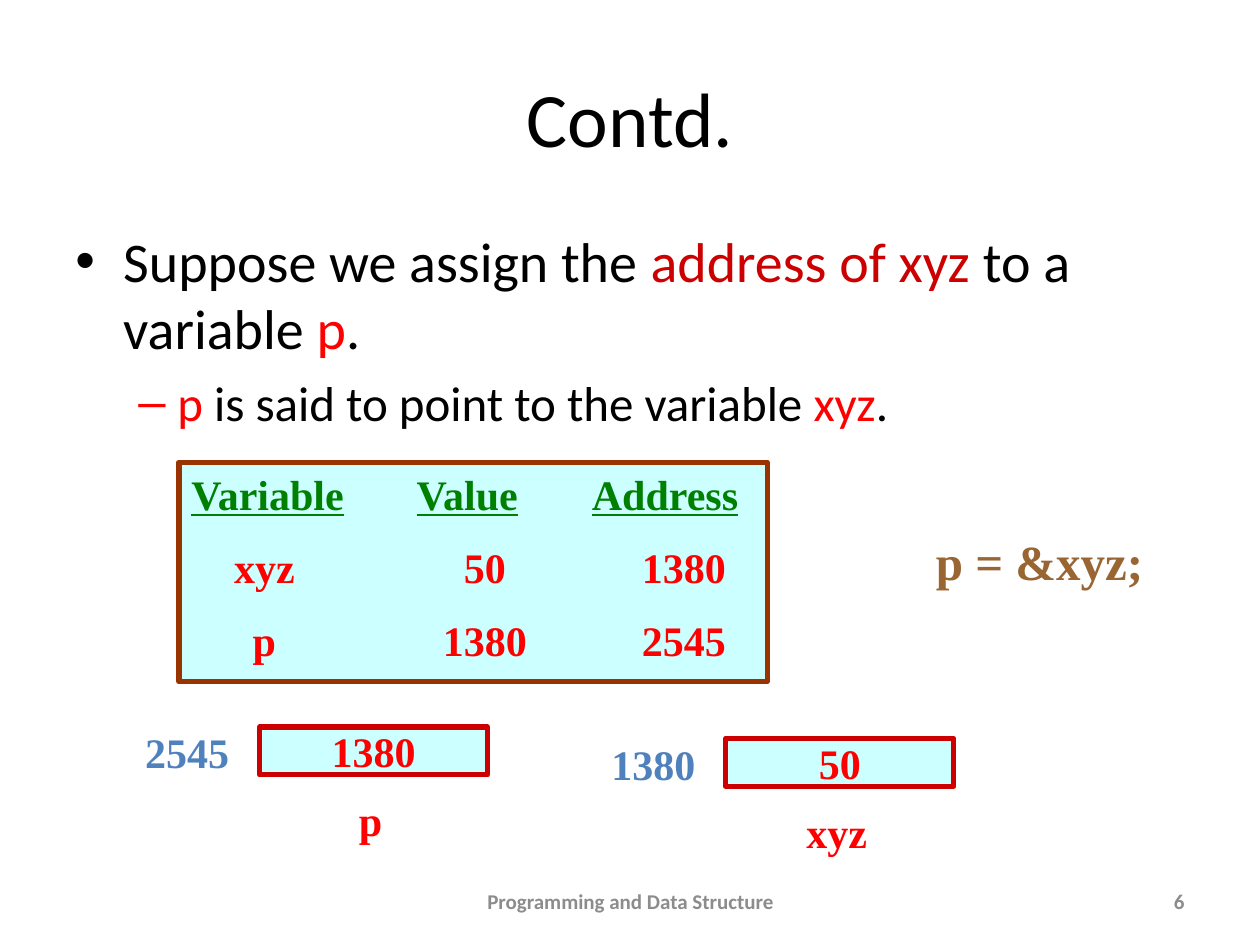
from lxml import etree
from pptx import Presentation
from pptx import util as u
from pptx.dml.color import RGBColor
from pptx.enum import shapes, text
from pptx.oxml.ns import qn

WIDTH, HEIGHT = 10, 7.5
MARGIN = 0.05 * WIDTH
CONTENT = WIDTH - 2 * MARGIN
SANS, SERIF = "Calibri", "Times New Roman"
BLACK, RED, CRIMSON = "000000", "FF0000", "CC0000"
GREEN, BLUE, BROWN, TAN = "008000", "4F81BD", "993300", "996633"
AQUA, GREY = "CCFFFF", "8C8C8C"
LEFT, CENTER, RIGHT = (text.PP_ALIGN.LEFT, text.PP_ALIGN.CENTER,
                       text.PP_ALIGN.RIGHT)
TOP, MIDDLE = text.MSO_ANCHOR.TOP, text.MSO_ANCHOR.MIDDLE


def color(value):
    return RGBColor.from_string(value)


def write(frame, paragraphs, size=24, font=SERIF, fill=BLACK, bold=False,
          align=LEFT, anchor=TOP, wrap=True):
    """Each paragraph is a list of runs; a run is (words, overrides)."""
    frame.word_wrap = wrap
    frame.vertical_anchor = anchor
    for number, runs in enumerate(paragraphs):
        paragraph = frame.add_paragraph() if number else frame.paragraphs[0]
        paragraph.alignment = align
        for words, look in runs:
            run = paragraph.add_run()
            run.text = words
            run.font.name = font
            run.font.bold = bold
            run.font.size = u.Pt(look.get("size", size))
            run.font.underline = look.get("underline", False)
            run.font.color.rgb = color(look.get("fill", fill))
    return frame.paragraphs


def label(slide, box, words, **look):
    area = slide.shapes.add_textbox(*map(u.Inches, box))
    return write(area.text_frame, [[(words, {})]], **look)


def panel(slide, box, outline):
    shape = slide.shapes.add_shape(shapes.MSO_SHAPE.RECTANGLE,
                                   *map(u.Inches, box))
    shape.shadow.inherit = False
    shape.fill.solid()
    shape.fill.fore_color.rgb = color(AQUA)
    shape.line.color.rgb = color(outline)
    shape.line.width = u.Pt(3)
    return shape.text_frame


def add_bullet(paragraph, mark, indent, hang):
    props = paragraph._p.get_or_add_pPr()
    props.set("marL", str(u.Inches(indent)))
    props.set("indent", str(-u.Inches(hang)))
    etree.SubElement(props, qn("a:buFont")).set("typeface", "Arial")
    etree.SubElement(props, qn("a:buChar")).set("char", mark)


def add_center_tabs(paragraph, stops):
    tabs = etree.SubElement(paragraph._p.get_or_add_pPr(), qn("a:tabLst"))
    for stop in stops:
        tab = etree.SubElement(tabs, qn("a:tab"))
        tab.set("pos", str(u.Inches(stop)))
        tab.set("algn", "ctr")


def explanation(slide, box):
    area = slide.shapes.add_textbox(*map(u.Inches, box))
    red = {"fill": RED}
    small, small_red = {"size": 28}, {"size": 28, "fill": RED}
    point, detail = write(area.text_frame, [
        [("Suppose we assign the ", {}), ("address of xyz", {"fill": CRIMSON}),
         (" to a variable ", {}), ("p", red), (".", {})],
        [("p", small_red), (" is said to point to the variable ", small),
         ("xyz", small_red), (".", small)],
    ], size=32, font=SANS)
    detail.level = 1
    detail.space_before = u.Pt(6.5)
    add_bullet(point, "•", 0.38, 0.38)
    add_bullet(detail, "–", 0.81, 0.31)


def variable_list(slide, box):
    """Rows of values centred on tab stops inside one framed panel."""
    header = {"fill": GREEN, "underline": True}
    rows = [(("Variable", "Value", "Address"), header),
            (("xyz", "50", "1380"), {}),
            (("p", "1380", "2545"), {})]
    lines = write(panel(slide, box, BROWN),
                  [[run for word in words for run in (("\t", {}), (word, look))]
                   for words, look in rows], fill=RED, bold=True)
    header_stops, value_stops = (0.6, 2.19, 3.76), (0.58, 2.33, 3.91)
    for number, line in enumerate(lines):
        line.space_before = u.Pt(13 if number else 0)
        add_center_tabs(line, value_stops if number else header_stops)


def memory_cell(slide, left, top, address, value, name, name_center):
    """Address, framed value and the variable's name below."""
    look = dict(bold=True, align=CENTER, wrap=False)
    frame = panel(slide, (left + 1.01, top + 0.05, 1.81, 0.38), CRIMSON)
    write(frame, [[(value, {})]], fill=RED, anchor=MIDDLE, **look)
    label(slide, (left, top, 0.87, 0.5), address, fill=BLUE, **look)
    label(slide, (left + name_center - 0.34, top + 0.54, 0.68, 0.5), name,
          fill=RED, **look)


def footer(slide, top, height):
    look = dict(size=12, font=SANS, fill=GREY, bold=True, anchor=MIDDLE)
    label(slide, (3.42, top, 3.17, height), "Programming and Data Structure",
          align=CENTER, **look)
    label(slide, (7.17, top, 2.33, height), "6", align=RIGHT, **look)


def main():
    deck = Presentation()
    deck.slide_width, deck.slide_height = u.Inches(WIDTH), u.Inches(HEIGHT)
    slide = deck.slides.add_slide(deck.slide_layouts[6])
    label(slide, (MARGIN, 0.04 * HEIGHT, CONTENT, 1.25), "Contd.",
          size=44, font=SANS, align=CENTER, anchor=MIDDLE)
    explanation(slide, (MARGIN, 1.75, CONTENT, 0.66 * HEIGHT))
    footer(slide, 6.95, 0.4)
    variable_list(slide, (1.42, 3.67, 4.67, 1.74))
    label(slide, (7.25, 4.17, 2, 0.57), "p = &xyz;", size=28, fill=TAN,
          bold=True, align=CENTER)
    memory_cell(slide, 4.75, 5.81, "1380", "50", "xyz", 1.89)
    memory_cell(slide, 1.05, 5.72, "2545", "1380", "p", 1.89)
    deck.save("out.pptx")


if __name__ == "__main__":
    main()
